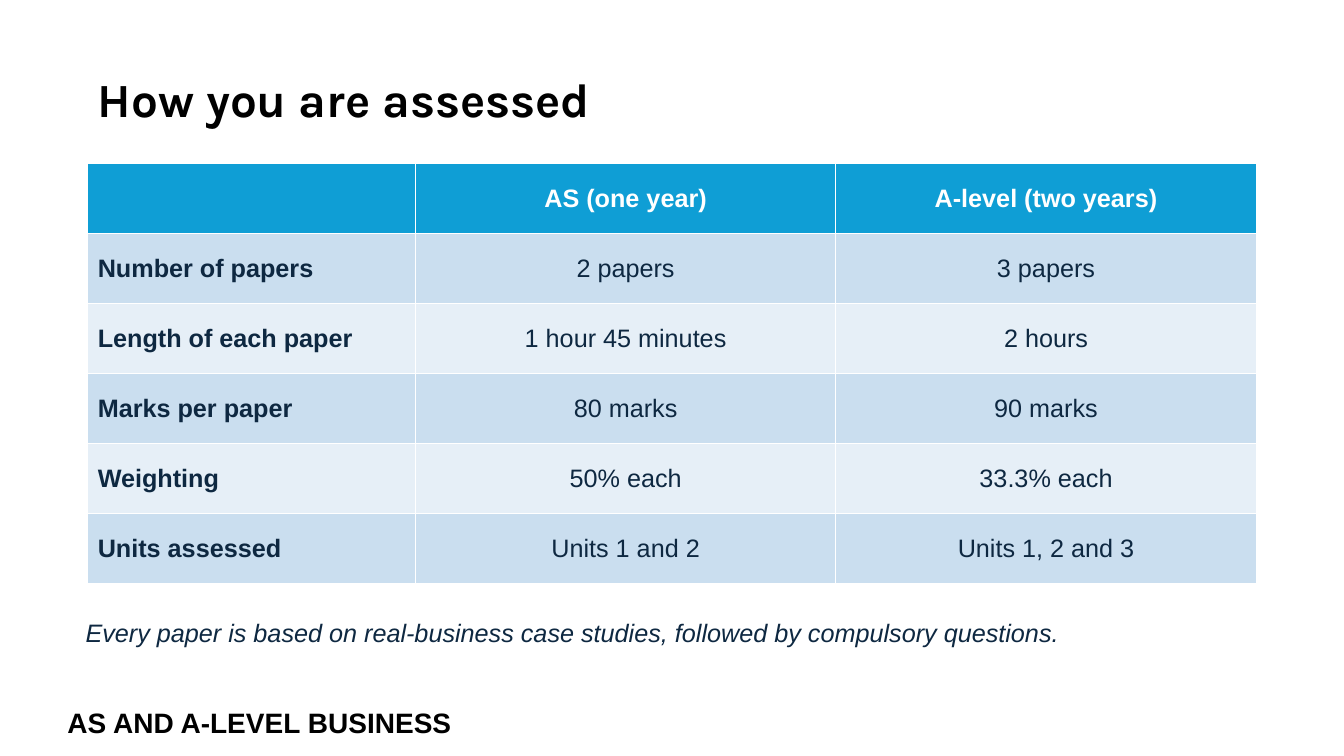
from dataclasses import dataclass

from pptx import Presentation
from pptx.dml.color import RGBColor
from pptx.enum.text import MSO_ANCHOR, MSO_AUTO_SIZE, PP_ALIGN
from pptx.util import Inches, Pt

LEFT, CENTER = PP_ALIGN.LEFT, PP_ALIGN.CENTER
TOP, MIDDLE = MSO_ANCHOR.TOP, MSO_ANCHOR.MIDDLE
GROW, FIXED = MSO_AUTO_SIZE.SHAPE_TO_FIT_TEXT, MSO_AUTO_SIZE.NONE

WIDTH, HEIGHT = 13.33, 7.5
MARGIN = 0.87
COLUMN_WIDTHS = (3.25, 4.17, 4.17)
ROW_HEIGHT = 0.695


@dataclass(frozen=True)
class Theme:
    heading_font: str = "Karla"
    body_font: str = "Arial"
    title_size: int = 34
    footer_size: int = 20
    body_size: int = 18
    black: str = "000000"
    white: str = "FFFFFF"
    navy: str = "0E2841"
    header: str = "0F9ED5"
    bands: tuple = ("CADEEF", "E6EFF7")


THEME = Theme()

ASSESSMENT = (
    ("", "AS (one year)", "A-level (two years)"),
    ("Number of papers", "2 papers", "3 papers"),
    ("Length of each paper", "1 hour 45 minutes", "2 hours"),
    ("Marks per paper", "80 marks", "90 marks"),
    ("Weighting", "50% each", "33.3% each"),
    ("Units assessed", "Units 1 and 2", "Units 1, 2 and 3"),
)


def style_text(paragraph, size, color, font=THEME.body_font, bold=False, italic=False):
    paragraph.font.name = font
    paragraph.font.size = Pt(size)
    paragraph.font.bold = bold
    paragraph.font.italic = italic
    paragraph.font.color.rgb = RGBColor.from_string(color)
    for run in paragraph.runs:
        run.font.name = font
        run.font.size = Pt(size)
        run.font.bold = bold
        run.font.italic = italic
        run.font.color.rgb = RGBColor.from_string(color)


def add_text(slide, box, text, size, color, anchor=TOP, fit=GROW, spacing=None, **style):
    shape = slide.shapes.add_textbox(*map(Inches, box))
    text_frame = shape.text_frame
    text_frame.word_wrap = True
    text_frame.auto_size = fit
    text_frame.vertical_anchor = anchor
    text_frame.text = text
    paragraph = text_frame.paragraphs[0]
    paragraph.line_spacing = spacing
    style_text(paragraph, size, color, **style)


def fill_cell(cell, text, row, column):
    is_header = row == 0
    fill = THEME.header if is_header else THEME.bands[(row - 1) % 2]
    cell.fill.solid()
    cell.fill.fore_color.rgb = RGBColor.from_string(fill)
    cell.vertical_anchor = MIDDLE
    cell.text_frame.text = text
    paragraph = cell.text_frame.paragraphs[0]
    paragraph.alignment = CENTER if column else LEFT
    color = THEME.white if is_header else THEME.navy
    style_text(paragraph, THEME.body_size, color, bold=is_header or column == 0)


def add_grid(slide, left, top, rows):
    size = (sum(COLUMN_WIDTHS), ROW_HEIGHT * len(rows))
    frame = slide.shapes.add_table(
        len(rows), len(COLUMN_WIDTHS), *map(Inches, (left, top, *size))
    )
    table = frame.table
    table.first_col = True
    for column, width in zip(table.columns, COLUMN_WIDTHS):
        column.width = Inches(width)
    for row, texts in enumerate(rows):
        table.rows[row].height = Inches(ROW_HEIGHT)
        for column, text in enumerate(texts):
            fill_cell(table.cell(row, column), text, row, column)


def main():
    presentation = Presentation()
    presentation.slide_width = Inches(WIDTH)
    presentation.slide_height = Inches(HEIGHT)
    slide = presentation.slides.add_slide(presentation.slide_layouts[6])

    # Course name at the foot
    add_text(slide, (0.57, 6.95, 5.5, 0.44), "AS AND A-LEVEL BUSINESS",
             THEME.footer_size, THEME.black, bold=True)

    # Title
    add_text(slide, (MARGIN, 0.4, 11.55, 1.22), "How you are assessed",
             THEME.title_size, THEME.black, anchor=MIDDLE, fit=FIXED,
             spacing=0.9, font=THEME.heading_font, bold=True)

    # Assessment table
    add_grid(slide, MARGIN, 1.62, ASSESSMENT)

    # Note below the table
    add_text(slide, (0.75, 6.08, 10.9, 0.4),
             "Every paper is based on real-business case studies, "
             "followed by compulsory questions.",
             THEME.body_size, THEME.navy, italic=True)

    presentation.save("out.pptx")


if __name__ == "__main__":
    main()
